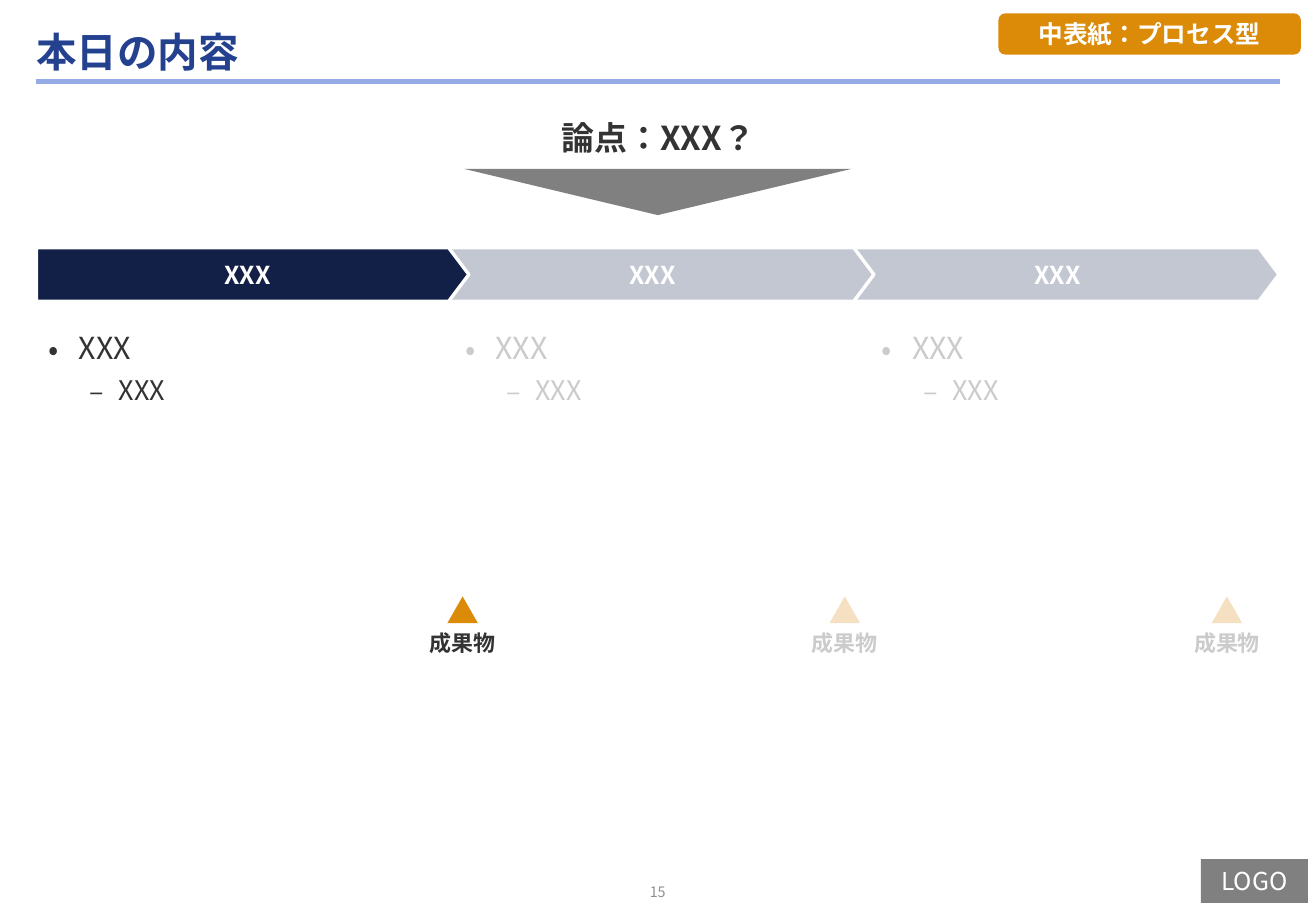
from lxml.etree import SubElement
from pptx import Presentation
from pptx.dml.color import RGBColor
from pptx.enum.lang import MSO_LANGUAGE_ID
from pptx.enum.shapes import MSO_CONNECTOR, MSO_SHAPE
from pptx.enum.text import MSO_ANCHOR, PP_ALIGN
from pptx.oxml.ns import qn
from pptx.util import Pt

TITLE = "本日の内容"
TAG = "中表紙：プロセス型"
ISSUE = "論点：XXX？"
LOGO = "LOGO"
PAGE_NUMBER = "15"
STAGES = [
    {"name": "XXX", "points": [("XXX", 0), ("XXX", 1)], "output": "成果物"},
    {"name": "XXX", "points": [("XXX", 0), ("XXX", 1)], "output": "成果物"},
    {"name": "XXX", "points": [("XXX", 0), ("XXX", 1)], "output": "成果物"},
]
ACTIVE = 0

THEME = {
    "font": "Noto Sans CJK JP",
    "title": "244190", "rule": "95ABE5", "text": "333333", "white": "FFFFFF",
    "navy": "122048", "orange": "DB8B08", "grey": "808080", "number": "909090",
    "title_size": 24, "issue_size": 19.5, "label_size": 14.6,
    "output_size": 13, "number_size": 8.5,
}
# Per level: size, space before, left margin, indent, bullet
LEVELS = [(18, 10, 18, -18, "•"), (16, 5, 41.76, -17.28, "–")]

LEFT = 21.6
BODY_PITCH, STAGE_PITCH, OUTPUT_PITCH = 247, 240.1, 226.5
OUTPUT_CENTER = 274.2

deck = Presentation()
deck.slide_width, deck.slide_height = Pt(780), Pt(540)
slide = deck.slides.add_slide(deck.slide_layouts[6])


def color(name):
    return RGBColor.from_string(THEME[name])


def write(paragraph, text, size, ink, bold=False, align=PP_ALIGN.CENTER):
    paragraph.text = text
    paragraph.alignment = align
    font = paragraph.font
    font.size, font.bold, font.name = Pt(size), bold, THEME["font"]
    font.language_id = MSO_LANGUAGE_ID.JAPANESE
    font.color.rgb = color(ink)
    properties = paragraph._p.pPr.find(qn("a:defRPr"))
    SubElement(properties, qn("a:ea")).set("typeface", THEME["font"])


def add_text(box, text="", size=18, ink="text", bold=False,
             align=PP_ALIGN.CENTER, anchor=MSO_ANCHOR.TOP, margins=None):
    frame = slide.shapes.add_textbox(*map(Pt, box)).text_frame
    frame.word_wrap = True
    frame.vertical_anchor = anchor
    if margins:
        (frame.margin_left, frame.margin_top,
         frame.margin_right, frame.margin_bottom) = map(Pt, margins)
    if text:
        write(frame.paragraphs[0], text, size, ink, bold, align)
    return frame


def add_block(kind, box, fill, text="", bold=True):
    block = slide.shapes.add_shape(kind, *map(Pt, box))
    block.shadow.inherit = False
    block.fill.solid()
    block.fill.fore_color.rgb = color(fill)
    block.line.fill.background()
    if text:
        block.text_frame.vertical_anchor = MSO_ANCHOR.MIDDLE
        write(block.text_frame.paragraphs[0], text,
              THEME["label_size"], "white", bold)
    return block


def add_points(index, points):
    frame = add_text((LEFT + index * BODY_PITCH, 191.5, 242, 116))
    for number, (text, level) in enumerate(points):
        paragraph = frame.add_paragraph() if number else frame.paragraphs[0]
        size, before, margin, indent, bullet = LEVELS[level]
        paragraph.level = level
        paragraph.space_before = Pt(before)
        properties = paragraph._p.get_or_add_pPr()
        properties.set("marL", str(Pt(margin)))
        properties.set("indent", str(Pt(indent)))
        SubElement(properties, qn("a:buFont")).set("typeface", THEME["font"])
        SubElement(properties, qn("a:buChar")).set("char", bullet)
        write(paragraph, text, size, "text", align=PP_ALIGN.LEFT)


def add_stage(index, stage):
    arrow = add_block(MSO_SHAPE.PENTAGON,
                      (LEFT + index * STAGE_PITCH, 146.9, 256.3, 31.7),
                      "navy", stage["name"])
    arrow.adjustments[0] = 0.375
    arrow.line.color.rgb = color("white")
    arrow.line.width = Pt(2)


def add_output(index, stage):
    center = OUTPUT_CENTER + index * OUTPUT_PITCH
    width = 81.4 if index == ACTIVE else 61.2
    add_block(MSO_SHAPE.ISOSCELES_TRIANGLE,
              (center - 9, 353.5, 18, 15.8), "orange")
    add_text((center - width / 2, 369.4, width, 23), stage["output"],
             THEME["output_size"], bold=True)


def add_veil():
    """Fade every stage drawn so far that is not active."""
    veil = add_block(MSO_SHAPE.RECTANGLE, (240.5, 132.5, 520.6, 315.4), "white")
    tint = veil._element.spPr.find(qn("a:solidFill"))[0]
    SubElement(tint, qn("a:alpha")).set("val", "75000")


rule = slide.shapes.add_connector(MSO_CONNECTOR.STRAIGHT,
                                  Pt(LEFT), Pt(48.3), Pt(758.4), Pt(48.3))
rule.line.color.rgb = color("rule")
rule.line.width = Pt(3)
SubElement(rule._element.spPr, qn("a:effectLst"))

add_block(MSO_SHAPE.RECTANGLE, (711.8, 509.2, 63.4, 26), "grey", LOGO, bold=False)
add_text((367.2, 521.2, 45.4, 15.1), PAGE_NUMBER, THEME["number_size"], "number",
         anchor=MSO_ANCHOR.MIDDLE, margins=(0, 0, 0, 0))
title = add_text((LEFT, 18, 737.3, 28.1), TITLE, THEME["title_size"], "title", True,
                 PP_ALIGN.LEFT, MSO_ANCHOR.MIDDLE, (0, 0, 7.2, 0))
title.paragraphs[0].line_spacing = 0.9

add_text((98.6, 66.2, 583.2, 31), ISSUE, THEME["issue_size"], bold=True)
funnel = add_block(MSO_SHAPE.ISOSCELES_TRIANGLE, (275, 100.1, 229.7, 27.4), "grey")
funnel.rotation = 180
add_block(MSO_SHAPE.ROUNDED_RECTANGLE, (591.8, 7.9, 179.3, 24.5), "orange", TAG)

for index, stage in enumerate(STAGES):
    add_points(index, stage["points"])

# Later stages lie behind earlier ones; the active stage lies above the veil.
for index, stage in reversed(list(enumerate(STAGES))):
    if index == ACTIVE:
        add_veil()
    add_stage(index, stage)
    add_output(index, stage)

deck.save("out.pptx")
